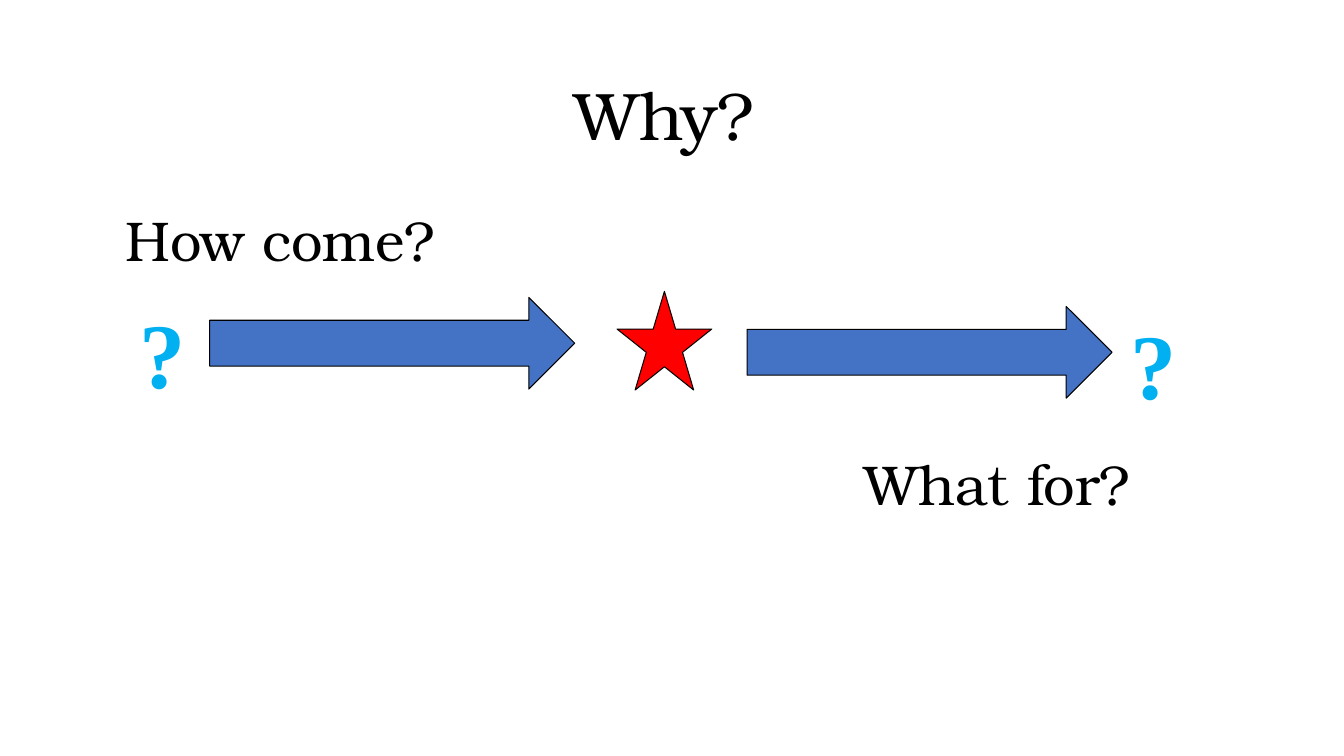
from dataclasses import dataclass

from pptx import Presentation
from pptx import util as u
from pptx.dml.color import RGBColor
from pptx.enum import shapes, text
from pptx.slide import Slide

SERIF = "TeX Gyre Bonum"
MARK_FONT = "Times New Roman"
BLACK, BLUE, RED, SKY = "000000", "4472C4", "FF0000", "00B0F0"
ARROW = shapes.MSO_SHAPE.RIGHT_ARROW
STAR = shapes.MSO_SHAPE.STAR_5_POINT


@dataclass(frozen=True)
class Box:
    left: float
    top: float
    width: float
    height: float

    def lengths(self) -> list[u.Length]:
        return [u.Inches(n) for n in (self.left, self.top, self.width, self.height)]


@dataclass(frozen=True)
class Caption:
    wording: str
    box: Box
    size: int = 40
    font: str = SERIF
    color: str = BLACK
    bold: bool = False
    centered: bool = False
    wrap: bool = True


@dataclass(frozen=True)
class Figure:
    kind: shapes.MSO_SHAPE
    box: Box
    fill: str


def rgb(value: str) -> RGBColor:
    return RGBColor.from_string(value)


def question_mark(left: float, top: float) -> Caption:
    return Caption("?", Box(left, top, 0.66, 1.21), 66, MARK_FONT, SKY,
                   bold=True, centered=True, wrap=False)


def time_arrow(left: float, top: float) -> Figure:
    return Figure(ARROW, Box(left, top, 3.62, 0.91), BLUE)


CAPTIONS = [
    Caption("How come?", Box(1.15, 1.99, 3.94, 0.77)),
    Caption("What for?", Box(8.48, 4.41, 4.04, 0.77)),
    Caption("Why?", Box(5.49, 0.68, 2.2, 0.91), 48, centered=True),
    question_mark(1.28, 2.89),
    question_mark(11.11, 3),
]
FIGURES = [
    time_arrow(7.41, 3.04),
    Figure(STAR, Box(6.12, 2.89, 0.94, 0.98), RED),
    time_arrow(2.08, 2.95),
]


def draw_caption(slide: Slide, caption: Caption) -> None:
    frame = slide.shapes.add_textbox(*caption.box.lengths()).text_frame
    frame.word_wrap = caption.wrap
    frame.auto_size = text.MSO_AUTO_SIZE.SHAPE_TO_FIT_TEXT
    paragraph = frame.paragraphs[0]
    paragraph.text = caption.wording
    if caption.centered:
        paragraph.alignment = text.PP_ALIGN.CENTER
    font = paragraph.font
    font.name = caption.font
    font.size = u.Pt(caption.size)
    font.bold = caption.bold
    font.color.rgb = rgb(caption.color)


def draw_figure(slide: Slide, figure: Figure) -> None:
    shape = slide.shapes.add_shape(figure.kind, *figure.box.lengths())
    shape.shadow.inherit = False
    shape.fill.solid()
    shape.fill.fore_color.rgb = rgb(figure.fill)
    shape.line.color.rgb = rgb(BLACK)
    shape.line.width = u.Pt(0.75)


def main() -> None:
    deck = Presentation()
    deck.slide_width, deck.slide_height = u.Inches(13.33), u.Inches(7.5)
    slide = deck.slides.add_slide(deck.slide_layouts[6])
    for figure in FIGURES:
        draw_figure(slide, figure)
    for caption in CAPTIONS:
        draw_caption(slide, caption)
    deck.save("out.pptx")


if __name__ == "__main__":
    main()
